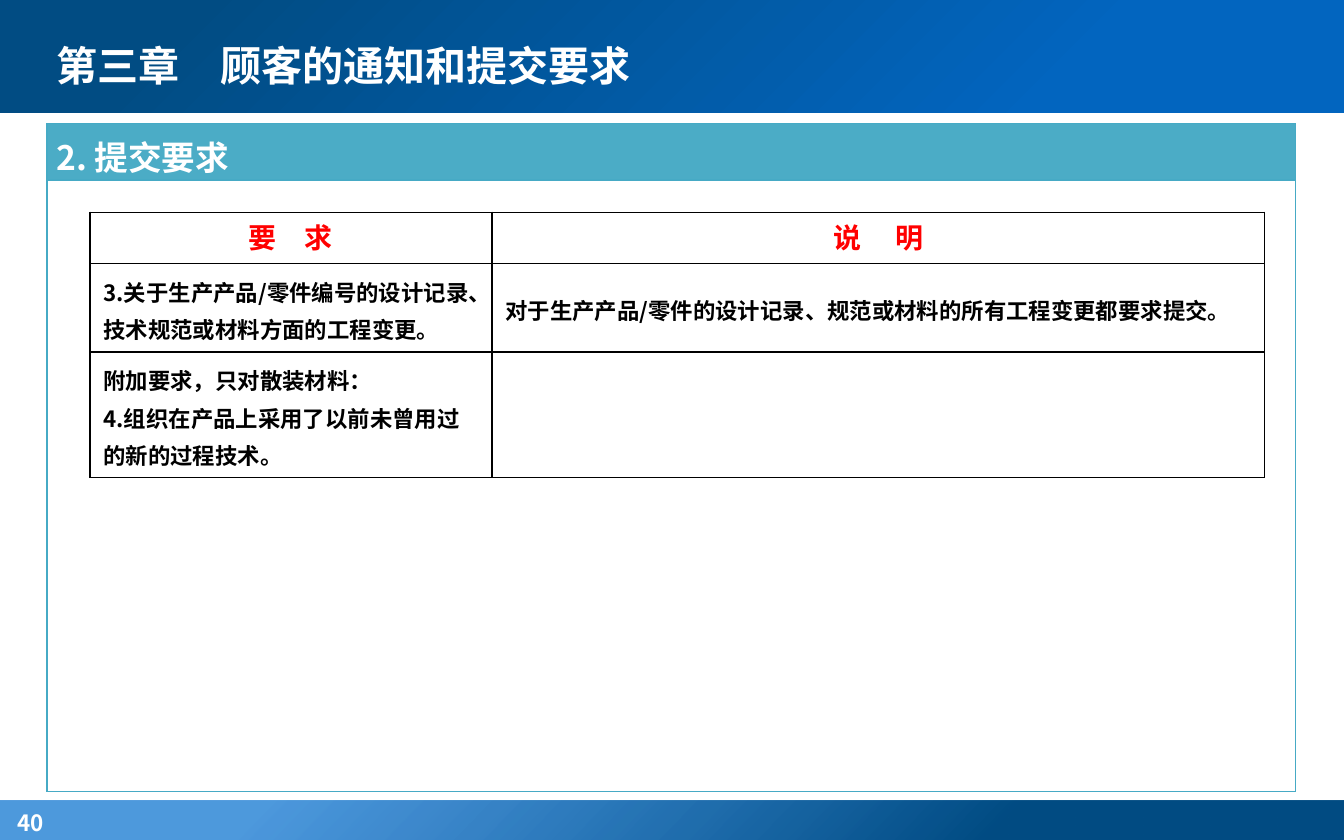
from pptx import Presentation
from pptx.dml.color import RGBColor
from pptx.enum.shapes import MSO_SHAPE as Shape
from pptx.enum.text import MSO_ANCHOR as Anchor, PP_ALIGN as Align
from pptx.oxml import parse_xml
from pptx.oxml.ns import nsdecls, qn
from pptx.util import Inches, Pt

WHITE = RGBColor(0xFF, 0xFF, 0xFF)
BLACK = RGBColor(0, 0, 0)
RED = RGBColor(0xFF, 0, 0)
TEAL = RGBColor(0x4B, 0xAC, 0xC6)
TEAL_EDGE = RGBColor(0x46, 0xAA, 0xC5)
NAVY = RGBColor(0x01, 0x4C, 0x83)
BLUE = RGBColor(0x02, 0x65, 0xBF)
BRIGHT = RGBColor(0x02, 0x6D, 0xCE)
CJK = "Noto Sans CJK SC"


def add_text(para, text, size, color, font=CJK, leading=None):
    if leading:
        para.line_spacing = Pt(leading)
    span = para.add_run()
    span.text = text
    span.font.size = Pt(size)
    span.font.bold = True
    span.font.color.rgb = color
    span.font.name = font
    east_asian = parse_xml(f'<a:ea {nsdecls("a")} typeface="{CJK}"/>')
    span.font._element.find(qn("a:latin")).addnext(east_asian)


def style_cell(cell, fill, edge, width):
    if fill is None:
        cell.fill.background()
    else:
        cell.fill.solid()
        cell.fill.fore_color.rgb = fill
    properties = cell._tc.get_or_add_tcPr()
    for position, side in enumerate("LRTB"):
        properties.insert(position, parse_xml(
            f'<a:ln{side} {nsdecls("a")} w="{Pt(width)}"><a:solidFill>'
            f'<a:srgbClr val="{edge}"/></a:solidFill></a:ln{side}>'))


deck = Presentation()
deck.slide_width, deck.slide_height = Inches(10), Inches(6.25)
page = deck.slides.add_slide(deck.slide_layouts[5])

# Footer and header bands: position, colour and opacity of each stop
bands = [
    (5.96, 0.31, [(26, NAVY, 100), (80, BRIGHT, 70)]),
    (-0.03, 0.87, [(21, BLUE, 100), (86, NAVY, 100)]),
]
for top, height, stops in bands:
    band = page.shapes.add_shape(
        Shape.RECTANGLE, 0, Inches(top), Inches(10), Inches(height))
    band.shadow.inherit = False
    band.line.fill.background()
    band.fill.background()
    stop_xml = "".join(
        f'<a:gs pos="{place * 1000}"><a:srgbClr val="{color}">'
        f'<a:alpha val="{opacity * 1000}"/></a:srgbClr></a:gs>'
        for place, color, opacity in stops)
    gradient = parse_xml(
        f'<a:gradFill {nsdecls("a")} rotWithShape="1"><a:gsLst>{stop_xml}</a:gsLst>'
        '<a:path path="circle"><a:fillToRect l="100000" t="100000"/></a:path>'
        '</a:gradFill>')
    shape_properties = band._element.spPr
    shape_properties.replace(shape_properties.find(qn("a:noFill")), gradient)

# Page number
box = page.shapes.add_textbox(0, Inches(5.97), Inches(0.59), Inches(0.28))
box.text_frame.word_wrap = True
box.text_frame.margin_left = Inches(0.13)
add_text(box.text_frame.paragraphs[0], "40", 12, WHITE)

# Title, brought in front of the header band
title = page.shapes.title
title.left, title.top = Inches(0.32), Inches(0.13)
title.width, title.height = Inches(6.38), Inches(0.71)
title.text_frame.vertical_anchor = Anchor.MIDDLE
para = title.text_frame.paragraphs[0]
para.alignment = Align.LEFT
add_text(para, "第三章　顾客的通知和提交要求", 22, WHITE, "Times New Roman")
page.shapes._spTree.append(title._element)

# Section panel
panel = page.shapes.add_table(
    2, 1, Inches(0.35), Inches(0.92), Inches(9.29), Inches(4.97)).table
panel.first_row = panel.horz_banding = False
panel.rows[0].height, panel.rows[1].height = Inches(0.42), Inches(4.55)
heading = panel.cell(0, 0)
style_cell(heading, TEAL, TEAL_EDGE, 0.75)
style_cell(panel.cell(1, 0), None, TEAL_EDGE, 0.75)
heading.margin_left = heading.margin_right = Inches(0.07)
heading.margin_top = heading.margin_bottom = 0
add_text(heading.text_frame.paragraphs[0], "2. 提交要求", 18, WHITE, leading=30)

# Requirements table: each cell is a list of paragraphs
rows = [
    (0.38, [["要　求"], ["说　 明"]]),
    (0.66, [["3.关于生产产品/零件编号的设计记录、技术规范或材料方面的工程变更。"],
            ["对于生产产品/零件的设计记录、规范或材料的所有工程变更都要求提交。"]]),
    (0.93, [["附加要求，只对散装材料：",
             "4.组织在产品上采用了以前未曾用过的新的过程技术。"], []]),
]
grid = page.shapes.add_table(
    3, 2, Inches(0.67), Inches(1.58), Inches(8.74), Inches(1.97)).table
grid.first_row = grid.horz_banding = False
for column, width in zip(grid.columns, (2.99, 5.75)):
    column.width = Inches(width)
for row_index, (height, contents) in enumerate(rows):
    grid.rows[row_index].height = Inches(height)
    for column_index, lines in enumerate(contents):
        cell = grid.cell(row_index, column_index)
        style_cell(cell, None, BLACK, 1)
        if row_index > 0:
            cell.vertical_anchor = Anchor.MIDDLE
        for line_index, line in enumerate(lines):
            frame = cell.text_frame
            para = frame.add_paragraph() if line_index else frame.paragraphs[0]
            if row_index == 0:
                para.alignment = Align.CENTER
                add_text(para, line, 15, RED, "Karla", 20)
            else:
                add_text(para, line, 12, BLACK, leading=20)

deck.save("out.pptx")
